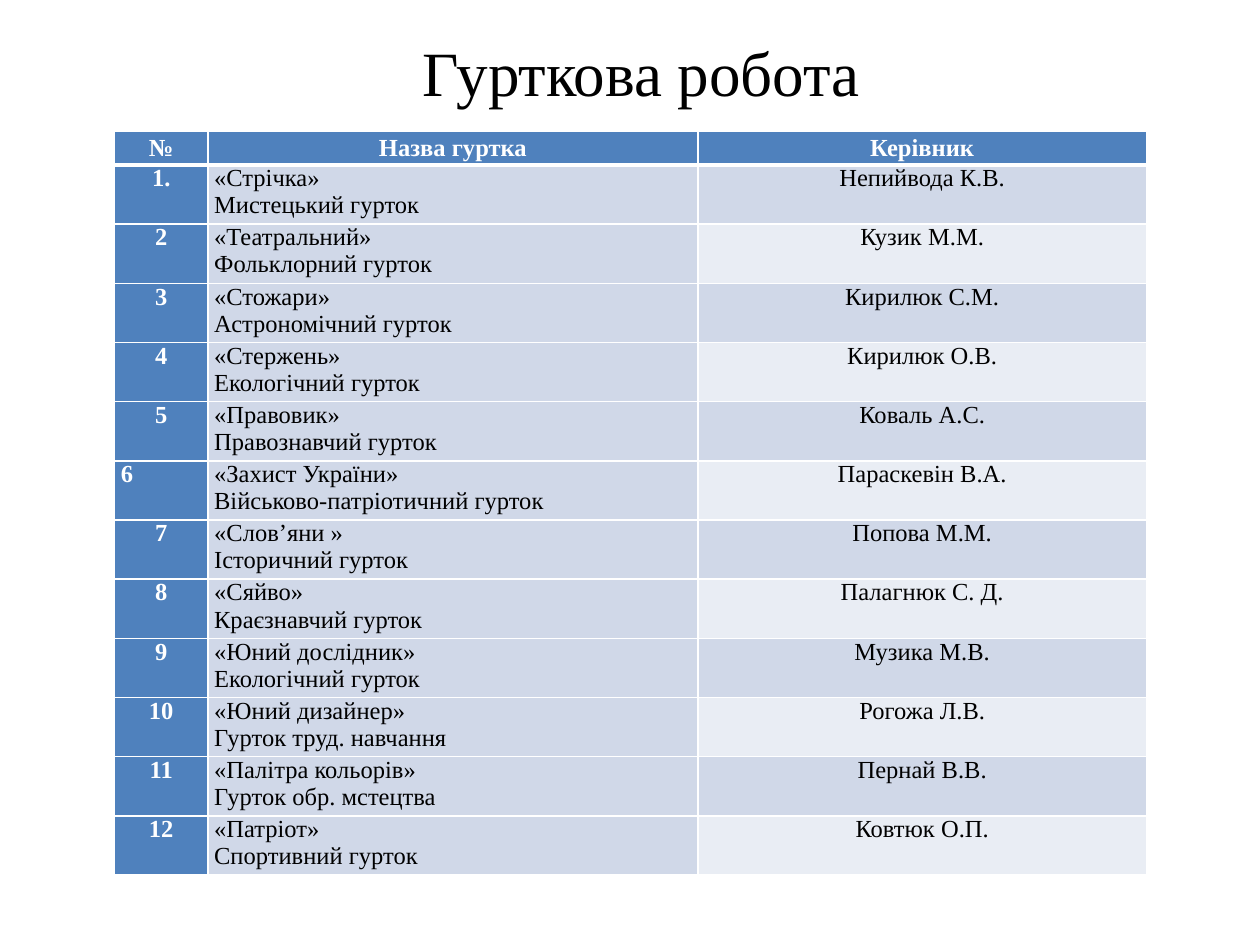
"""Build a slide that lists school clubs and their leaders."""
from typing import NamedTuple

from lxml import etree
from pptx import Presentation
from pptx import util as u
from pptx.dml.color import RGBColor
from pptx.enum import text
from pptx.oxml.ns import qn

FONT = "Times New Roman"
WIDE, HIGH = 10, 7.5
BLUE, BAND, PALE, WHITE, BLACK = "4F81BD", "D0D8E8", "E9EDF4", "FFFFFF", "000000"
COLS = (0.74, 3.89, 3.56)
HEAD, ROW = 0.23, 0.47
LEFT, MID = text.PP_ALIGN.LEFT, text.PP_ALIGN.CENTER


class Club(NamedTuple):
    """One club: its number, name, kind and leader."""
    num: str
    name: str
    kind: str
    lead: str


class Look(NamedTuple):
    """Style of the text in a frame."""
    size: float
    tint: str
    align: text.PP_ALIGN
    bold: bool = False
    gap: float = 1.0


CLUBS = (
    Club("1.", "«Стрічка»", "Мистецький гурток", "Непийвода К.В."),
    Club("2", "«Театральний»", "Фольклорний гурток", "Кузик М.М."),
    Club("3", "«Стожари»", "Астрономічний гурток", "Кирилюк С.М."),
    Club("4", "«Стержень»", "Екологічний гурток", "Кирилюк О.В."),
    Club("5", "«Правовик»", "Правознавчий гурток", "Коваль А.С."),
    Club("6", "«Захист України»", "Військово-патріотичний гурток", "Параскевін В.А."),
    Club("7", "«Слов’яни »", "Історичний гурток", "Попова М.М."),
    Club("8", "«Сяйво»", "Краєзнавчий гурток", "Палагнюк С. Д."),
    Club("9", "«Юний дослідник»", "Екологічний гурток", "Музика М.В."),
    Club("10", "«Юний дизайнер»", "Гурток труд. навчання", "Рогожа Л.В."),
    Club("11", "«Палітра кольорів»", "Гурток обр. мстецтва", "Пернай В.В."),
    Club("12", "«Патріот»", "Спортивний гурток", "Ковтюк О.П."),
)
TITLE = Look(36, BLACK, MID)
TOP = Look(14, WHITE, MID, True, 1.15)
NUM = Look(14, WHITE, MID, True)
NAME = Look(14, BLACK, LEFT)
LEAD = Look(14, BLACK, MID)


def paint(part, tint: str) -> None:
    """Give a fill or a font a solid colour."""
    if hasattr(part, "solid"):
        part.solid()
        part.fore_color.rgb = RGBColor.from_string(tint)
    else:
        part.color.rgb = RGBColor.from_string(tint)


def write(frame, words: str, look: Look) -> None:
    """Put words in a frame and style their runs."""
    frame.text = words
    for para in frame.paragraphs:
        para.alignment = look.align
        para.line_spacing = look.gap
        for run in para.runs:
            run.font.name = FONT
            run.font.size = u.Pt(look.size)
            run.font.bold = look.bold
            paint(run.font, look.tint)


def edge(cell, sides: dict[str, float]) -> None:
    """Draw white cell borders of the given widths in points."""
    props = cell._tc.get_or_add_tcPr()
    for spot, (side, width) in enumerate(sides.items()):
        line = etree.Element(qn(f"a:ln{side}"), w=str(u.Pt(width)))
        fill = etree.SubElement(line, qn("a:solidFill"))
        etree.SubElement(fill, qn("a:srgbClr"), val=WHITE)
        props.insert(spot, line)


def put(cell, words: str, look: Look, fill: str, row: int) -> None:
    """Fill one table cell."""
    cell.margin_left = cell.margin_right = u.Inches(0.05)
    cell.margin_top = cell.margin_bottom = 0
    write(cell.text_frame, words, look)
    paint(cell.fill, fill)
    edge(cell, {"L": 1, "R": 1, "T": 3 if row == 1 else 1, "B": 3 if row == 0 else 1})


def title(slide) -> None:
    """Add the slide title."""
    box = slide.shapes.add_textbox(
        u.Inches(0.059 * WIDE), u.Inches(0.0175 * HIGH), u.Inches(0.9 * WIDE), u.Inches(0.116 * HIGH))
    frame = box.text_frame
    frame.word_wrap = True
    frame.vertical_anchor = text.MSO_ANCHOR.MIDDLE
    write(frame, "Гурткова робота", TITLE)


def roster(slide) -> None:
    """Add the table of clubs."""
    count = len(CLUBS) + 1
    grid = slide.shapes.add_table(
        count, len(COLS), u.Inches(0.091 * WIDE), u.Inches(1.04),
        u.Inches(sum(COLS)), u.Inches(HEAD + ROW * len(CLUBS))).table
    for col, width in zip(grid.columns, COLS):
        col.width = u.Inches(width)
    for row, line in enumerate(grid.rows):
        line.height = u.Inches(ROW if row else HEAD)
    for col, words in enumerate(("№", "Назва гуртка", "Керівник")):
        put(grid.cell(0, col), words, TOP, BLUE, 0)
    for row, club in enumerate(CLUBS, 1):
        num = NUM._replace(align=LEFT) if club.num == "6" else NUM
        put(grid.cell(row, 0), club.num, num, BLUE, row)
        put(grid.cell(row, 1), f"{club.name}\n{club.kind}", NAME, BAND, row)
        put(grid.cell(row, 2), club.lead, LEAD, BAND if row % 2 else PALE, row)


def main() -> None:
    """Build and save the deck."""
    deck = Presentation()
    deck.slide_width, deck.slide_height = u.Inches(WIDE), u.Inches(HIGH)
    slide = deck.slides.add_slide(deck.slide_layouts[6])
    title(slide)
    roster(slide)
    deck.save("out.pptx")


if __name__ == "__main__":
    main()
